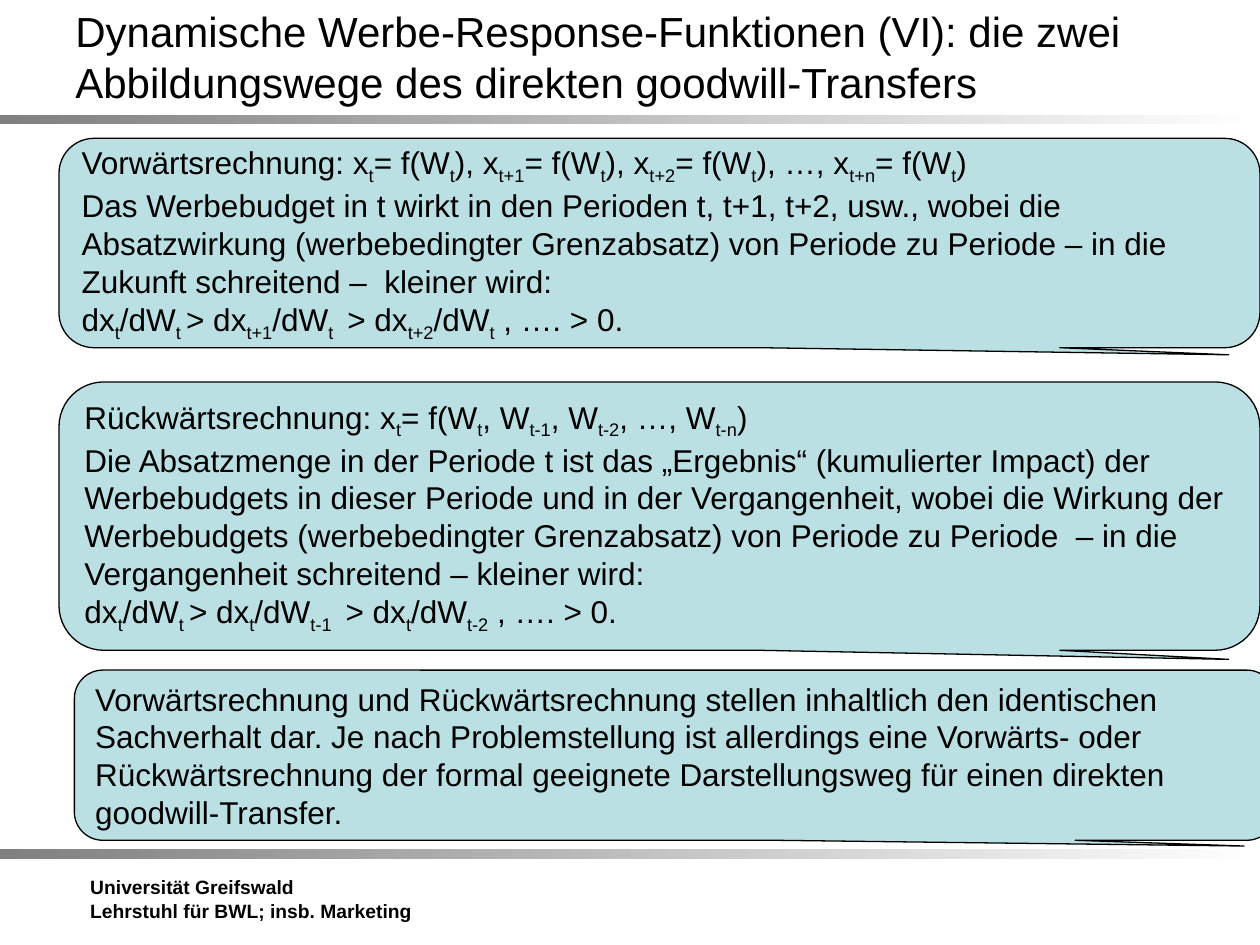
from pptx import Presentation
from pptx.dml.color import RGBColor
from pptx.enum.shapes import MSO_SHAPE
from pptx.enum.text import MSO_ANCHOR, PP_ALIGN
from pptx.util import Cm, Pt


def rgb(hex_color):
    return RGBColor.from_string(hex_color)


class SlideBuilder:
    """Holds the style and the slide being filled."""

    FONT = {"name": "Arial", "bold": False}
    TEXT, CALLOUT, BAR = "000000", "BBE0E3", ("808080", "FFFFFF")
    CALLOUT_ADJUST = (0.474, 0.534, 0.167)

    def __init__(self, prs):
        self.slide = prs.slides.add_slide(prs.slide_layouts[6])

    def bar(self, top):
        sp = self.slide.shapes.add_shape(
            MSO_SHAPE.RECTANGLE, 0, Cm(top), Cm(25.4), Cm(0.2))
        sp.shadow.inherit = False
        sp.line.fill.background()
        sp.fill.gradient()
        sp.fill.gradient_angle = 0
        for stop, color in zip(sp.fill.gradient_stops, self.BAR):
            stop.color.rgb = rgb(color)

    def add_paragraphs(self, sp, paragraphs, anchor, **font):
        """Fill a shape; {braces} mark subscripts, a newline a line break."""
        tf = sp.text_frame
        tf.word_wrap = True
        tf.vertical_anchor = anchor
        for i, text in enumerate(paragraphs):
            p = tf.paragraphs[0] if i == 0 else tf.add_paragraph()
            p.alignment = PP_ALIGN.LEFT
            for n, line in enumerate(text.split("\n")):
                if n:
                    p.add_line_break()
                self.add_line(p, line, {**self.FONT, **font})

    def add_line(self, p, line, font):
        for i, part in enumerate(line.replace("}", "{").split("{")):
            if not part:
                continue
            r = p.add_run()
            r.text = part
            for name, value in font.items():
                setattr(r.font, name, value)
            r.font.color.rgb = rgb(self.TEXT)
            if i % 2:
                r.font._element.set("baseline", "-25000")

    def text(self, left, top, width, height, paragraphs,
             anchor=MSO_ANCHOR.TOP, **font):
        sp = self.slide.shapes.add_textbox(
            Cm(left), Cm(top), Cm(width), Cm(height))
        self.add_paragraphs(sp, paragraphs, anchor, **font)

    def callout(self, left, top, height, paragraphs):
        sp = self.slide.shapes.add_shape(
            MSO_SHAPE.ROUNDED_RECTANGULAR_CALLOUT,
            Cm(left), Cm(top), Cm(24.21), Cm(height))
        for i, value in enumerate(self.CALLOUT_ADJUST):
            sp.adjustments[i] = value
        sp.shadow.inherit = False
        sp.fill.solid()
        sp.fill.fore_color.rgb = rgb(self.CALLOUT)
        sp.line.color.rgb = rgb(self.TEXT)
        sp.line.width = Pt(0.75)
        self.add_paragraphs(sp, paragraphs, MSO_ANCHOR.MIDDLE, size=Pt(18))


def main():
    prs = Presentation()
    prs.slide_width, prs.slide_height = Cm(25.4), Cm(19.05)
    s = SlideBuilder(prs)

    # Frame: gradient bars and footer
    for top in (2.31, 17.12):
        s.bar(top)
    s.text(1.57, 17.53, 9, 1.5,
           ["Universität Greifswald", "Lehrstuhl für BWL; insb. Marketing"],
           size=Pt(11), bold=True)

    # Title
    s.text(1.27, 0.33, 22.86, 1.6,
           ["Dynamische Werbe-Response-Funktionen (VI): die zwei "
            "Abbildungswege des direkten goodwill-Transfers"],
           anchor=MSO_ANCHOR.MIDDLE, size=Pt(24))

    # Forward calculation
    s.callout(1.19, 2.79, 4.22, [
        "Vorwärtsrechnung: x{t}= f(W{t}), x{t+1}= f(W{t}), "
        "x{t+2}= f(W{t}), …, x{t+n}= f(W{t})",
        "Das Werbebudget in t wirkt in den Perioden t, t+1, t+2, usw., wobei "
        "die Absatzwirkung (werbebedingter Grenzabsatz) von Periode zu "
        "Periode – in die Zukunft schreitend –  kleiner wird:\n"
        "dx{t}/dW{t }> dx{t+1}/dW{t } > dx{t+2}/dW{t} , …. > 0."])

    # Backward calculation
    s.callout(1.19, 7.7, 5.41, [
        "Rückwärtsrechnung: x{t}= f(W{t}, W{t-1}, W{t-2}, …, W{t-n})",
        "Die Absatzmenge in der Periode t ist das „Ergebnis“ (kumulierter "
        "Impact) der Werbebudgets in dieser Periode und in der Vergangenheit, "
        "wobei die Wirkung der Werbebudgets (werbebedingter Grenzabsatz) von "
        "Periode zu Periode  – in die Vergangenheit schreitend – kleiner "
        "wird:\n"
        "dx{t}/dW{t }> dx{t}/dW{t-1 } > dx{t}/dW{t-2} , …. > 0."])

    # Conclusion
    s.callout(1.5, 13.51, 3.43, [
        "Vorwärtsrechnung und Rückwärtsrechnung stellen inhaltlich den "
        "identischen Sachverhalt dar. Je nach Problemstellung ist allerdings "
        "eine Vorwärts- oder Rückwärtsrechnung der formal geeignete "
        "Darstellungsweg für einen direkten goodwill-Transfer."])

    prs.save("out.pptx")


if __name__ == "__main__":
    main()
